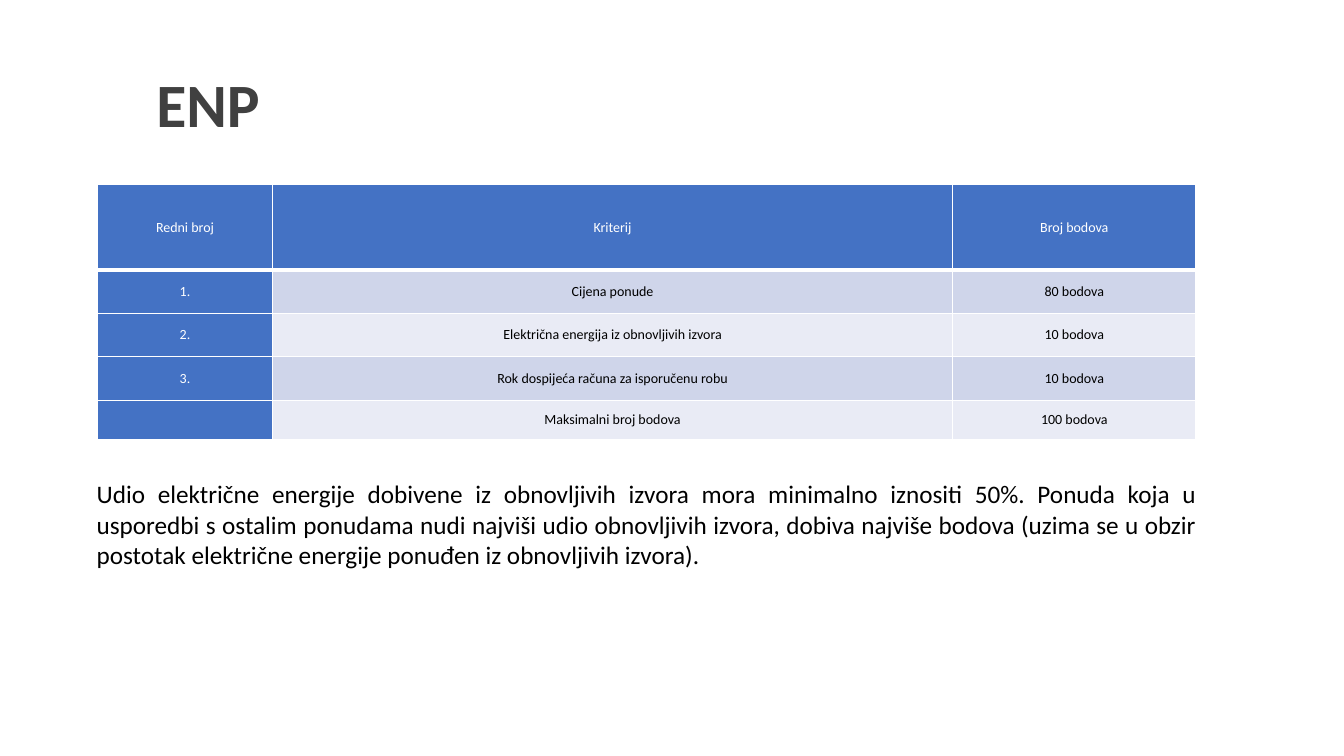
from dataclasses import dataclass

from lxml.etree import SubElement
from pptx import Presentation
from pptx.dml.color import RGBColor as RGB
from pptx.enum.text import MSO_ANCHOR as Anchor, PP_ALIGN as Align
from pptx.oxml.ns import qn
from pptx.util import Inches, Pt

WIDE, HIGH = 13.33, 7.5


@dataclass(frozen=True)
class Theme:
    face: str = "Calibri"
    title: int = 44
    body: int = 18
    cell: int = 10
    gray: str = "404040"
    black: str = "000000"
    white: str = "FFFFFF"
    blue: str = "4472C4"
    bands: tuple = ("CFD5EA", "E9EBF5")


THEME = Theme()
COLS = (1.73, 6.75, 2.41)
ROWS = (0.85, 0.43, 0.43, 0.43, 0.39)
DATA = (
    ("Redni broj", "Kriterij", "Broj bodova"),
    ("1.", "Cijena ponude", "80 bodova"),
    ("2.", "Električna energija iz obnovljivih izvora", "10 bodova"),
    ("3.", "Rok dospijeća računa za isporučenu robu", "10 bodova"),
    ("", "Maksimalni broj bodova", "100 bodova"),
)
NOTE = (
    "Udio električne energije dobivene iz obnovljivih izvora mora minimalno "
    "iznositi 50%. Ponuda koja u usporedbi s ostalim ponudama nudi najviši "
    "udio obnovljivih izvora, dobiva najviše bodova (uzima se u obzir "
    "postotak električne energije ponuđen iz obnovljivih izvora)."
)


def apply(item, values):
    for name, value in values.items():
        setattr(item, name, value)


def write(frame, text, size, color, align, bold=False):
    frame.word_wrap = True
    para = frame.paragraphs[0]
    para.alignment = align
    if text:
        para.add_run().text = text
    for part in (para, *para.runs):
        apply(part.font, {"name": THEME.face, "size": Pt(size), "bold": bold})
        part.font.color.rgb = RGB.from_string(color)
    return para


def edge(cell, side, width):
    line = SubElement(cell._tc.get_or_add_tcPr(), qn(f"a:ln{side}"), w=str(Pt(width)))
    fill = SubElement(line, qn("a:solidFill"))
    SubElement(fill, qn("a:srgbClr"), val=THEME.white)


def add_title(slide, box, text):
    title = slide.shapes.title
    apply(title, dict(zip(("left", "top", "width", "height"), map(Inches, box))))
    title.text_frame.vertical_anchor = Anchor.MIDDLE
    para = write(title.text_frame, text, THEME.title, THEME.gray, Align.LEFT, True)
    para.line_spacing = 0.9


def add_cell(cell, text, row, col):
    head = row == 0 or col == 0
    apply(cell, {
        "margin_left": Inches(0.07), "margin_right": Inches(0.07),
        "margin_top": 0, "margin_bottom": 0, "vertical_anchor": Anchor.MIDDLE,
    })
    for side in "LRTB":
        edge(cell, side, 3 if row == 0 and side == "B" else 1)
    cell.fill.solid()
    fill = THEME.blue if head else THEME.bands[(row - 1) % 2]
    cell.fill.fore_color.rgb = RGB.from_string(fill)
    color = THEME.white if head else THEME.black
    write(cell.text_frame, text, THEME.cell, color, Align.CENTER)


def add_grid(slide, box):
    grid = slide.shapes.add_table(len(ROWS), len(COLS), *map(Inches, box)).table
    grid.first_col = True
    for col, width in zip(grid.columns, COLS):
        col.width = Inches(width)
    for row, height in zip(grid.rows, ROWS):
        row.height = Inches(height)
    for row, texts in enumerate(DATA):
        for col, text in enumerate(texts):
            add_cell(grid.cell(row, col), text, row, col)


def add_note(slide, box):
    frame = slide.shapes.add_textbox(*map(Inches, box)).text_frame
    write(frame, NOTE, THEME.body, THEME.black, Align.JUSTIFY)


def main():
    deck = Presentation()
    apply(deck, {"slide_width": Inches(WIDE), "slide_height": Inches(HIGH)})
    slide = deck.slides.add_slide(deck.slide_layouts.get_by_name("Title Only"))
    add_title(slide, (1.45, 0.52, 10.43, 1.09), "ENP")
    add_grid(slide, (0.97, 1.83, sum(COLS), sum(ROWS)))
    add_note(slide, (0.86, 4.7, 11.11, 1.31))
    deck.save("out.pptx")


if __name__ == "__main__":
    main()
